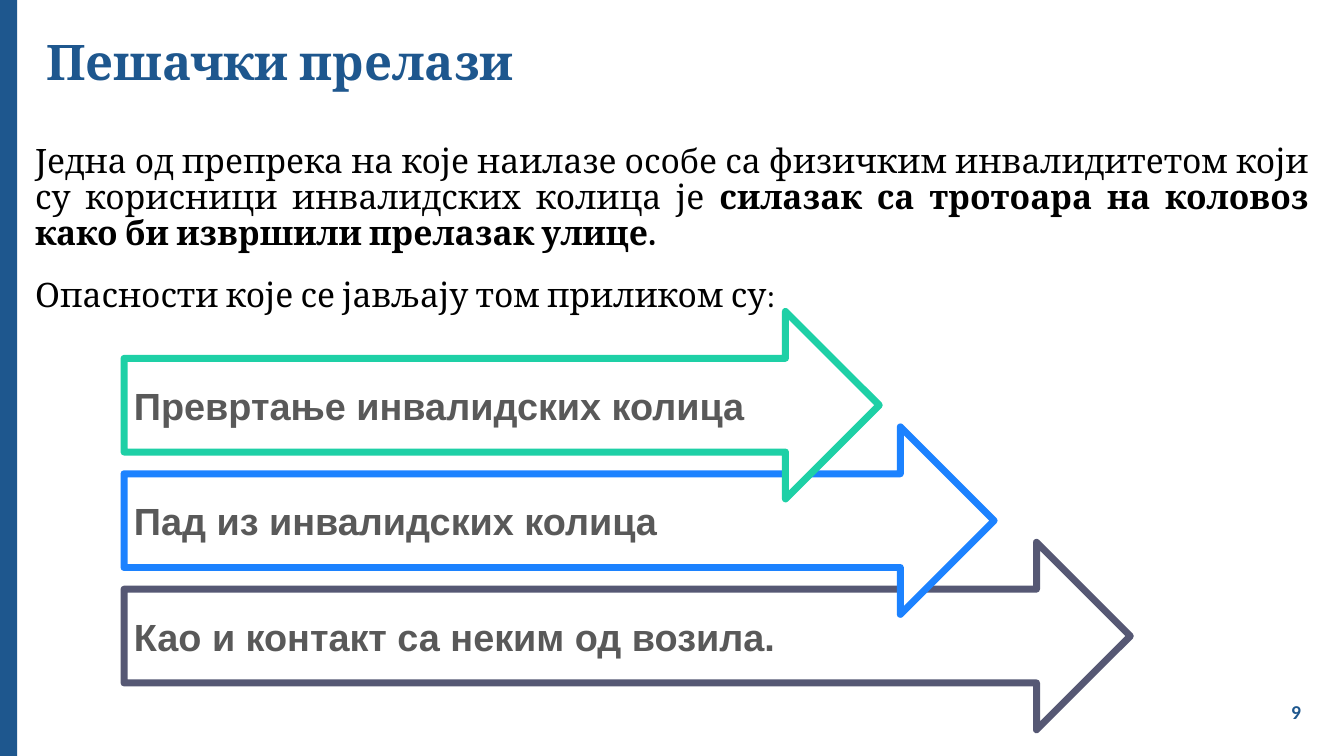
from pptx import Presentation
from pptx.dml.color import RGBColor
from pptx.enum.shapes import MSO_SHAPE
from pptx.enum.text import MSO_ANCHOR, PP_ALIGN
from pptx.util import Inches, Pt

RECT, ARROW = MSO_SHAPE.RECTANGLE, MSO_SHAPE.RIGHT_ARROW
TOP, MIDDLE = MSO_ANCHOR.TOP, MSO_ANCHOR.MIDDLE
LEFT, CENTER, JUSTIFY = PP_ALIGN.LEFT, PP_ALIGN.CENTER, PP_ALIGN.JUSTIFY

NAVY = RGBColor(0x1E, 0x57, 0x8E)
BLACK = RGBColor(0, 0, 0)
WHITE = RGBColor(255, 255, 255)
GRAY = RGBColor(0x59, 0x59, 0x59)
SLATE = RGBColor(0x56, 0x58, 0x74)
BLUE = RGBColor(0x1C, 0x82, 0xFF)
GREEN = RGBColor(0x1E, 0xD0, 0xA6)


class Page:
    """Holds the style and the slide; boxes are percent shares of its size."""
    serif, sans, small = "Cambria", "Arial", "Calibri"

    def __init__(self, deck):
        self.wide, self.high = deck.slide_width, deck.slide_height
        self.shapes = deck.slides.add_slide(deck.slide_layouts[6]).shapes

    def place(self, x, y, w, h):
        return (round(self.wide * x / 100), round(self.high * y / 100),
                round(self.wide * w / 100), round(self.high * h / 100))

    def style(self, para, font, size, color, bold=True, align=LEFT):
        para.alignment = align
        for run in para.runs:
            run.font.name, run.font.size = font, Pt(size)
            run.font.bold, run.font.color.rgb = bold, color

    def text(self, box, text, font, size, color, anchor=MIDDLE, bold=True, align=LEFT):
        frame = self.shapes.add_textbox(*self.place(*box)).text_frame
        frame.word_wrap, frame.vertical_anchor = True, anchor
        frame.text = text
        for para in frame.paragraphs:
            self.style(para, font, size, color, bold, align)
        return frame

    def title(self, box, text):
        frame = self.text(box, text, self.serif, 35, NAVY, TOP)
        frame.margin_top = Inches(0.12)
        frame.paragraphs[0].line_spacing = 0.9

    def body(self, box, text, stress):
        """Justified paragraphs; the first one ends with the stressed words."""
        frame = self.text(box, text, self.serif, 24, BLACK, TOP, False, JUSTIFY)
        first, *rest = frame.paragraphs
        first.add_run().text = stress
        self.style(first, self.serif, 24, BLACK, False, JUSTIFY)
        first.runs[-1].font.bold = True
        for para in frame.paragraphs:
            para.line_spacing, para.space_after = 0.9, Pt(12)
        for para in rest:
            para.space_before = Pt(6)

    def shape(self, kind, box, fill):
        shape = self.shapes.add_shape(kind, *self.place(*box))
        shape.shadow.inherit = False
        shape.fill.solid()
        shape.fill.fore_color.rgb = fill
        shape.line.fill.background()
        return shape

    def arrow(self, box, text, color):
        shape = self.shape(ARROW, box, WHITE)
        shape.line.color.rgb, shape.line.width = color, Pt(5)
        frame = shape.text_frame
        frame.word_wrap, frame.vertical_anchor = True, MIDDLE
        frame.text = text
        self.style(frame.paragraphs[0], self.sans, 27, GRAY)


def main():
    deck = Presentation()
    deck.slide_width, deck.slide_height = Inches(13.33), Inches(7.5)
    page = Page(deck)
    page.shape(RECT, (0, 0, 1.28, 100), NAVY)
    page.title((2.7, 3.47, 86.27, 19.33), "Пешачки прелази")
    page.text((94.52, 91.47, 3.83, 5.33), "9", page.small, 14, NAVY, align=CENTER)
    page.body(
        (1.88, 18.4, 96.25, 26.27),
        "Једна од препрека на које наилазе особе са физичким инвалидитетом "
        "који су корисници инвалидских колица је \n"
        "Опасности које се јављају том приликом су:",
        "силазак са тротоара на коловоз како би извршили прелазак улице.")

    risks = [("Превртање инвалидских колица", GREEN, 56.19),
             ("Пад из инвалидских колица", BLUE, 64.74),
             ("Као и контакт са неким од возила.", SLATE, 74.87)]
    first, step = 41.2, 15.27
    for row, (text, color, width) in reversed(list(enumerate(risks))):
        page.arrow((9.23, first + row * step, width, 24.8), text, color)
    deck.save("out.pptx")


if __name__ == "__main__":
    main()
